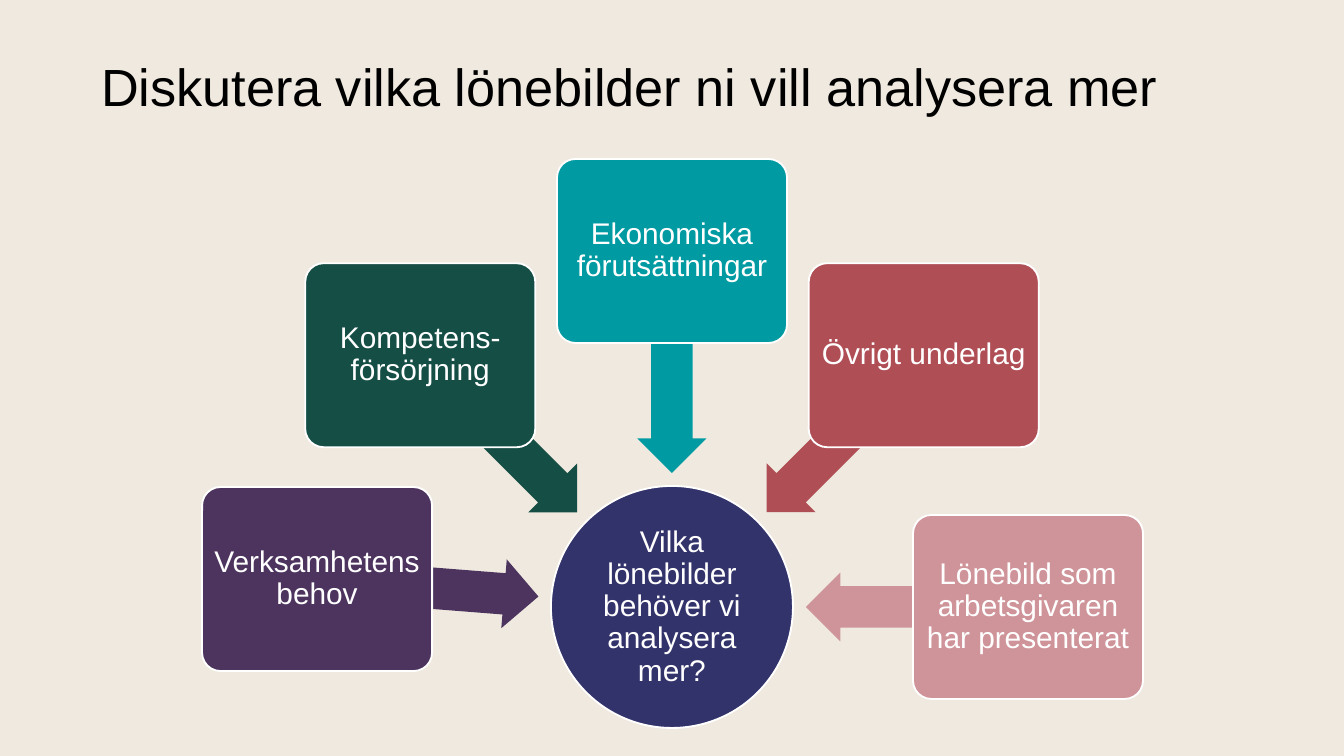
"""Build a slide of five inputs pointing at one central question."""
from math import cos, radians, sin

from pptx import Presentation
from pptx.dml.color import RGBColor
from pptx.enum.shapes import MSO_SHAPE
from pptx.enum.text import MSO_ANCHOR, MSO_AUTO_SIZE, PP_ALIGN
from pptx.util import Pt

ARROW, BOX, OVAL = MSO_SHAPE.LEFT_ARROW, MSO_SHAPE.ROUNDED_RECTANGLE, MSO_SHAPE.OVAL
LEFT, CENTER = PP_ALIGN.LEFT, PP_ALIGN.CENTER
MIDDLE, FIXED = MSO_ANCHOR.MIDDLE, MSO_AUTO_SIZE.NONE

COLORS = {
    "back": "EFE9DF", "black": "000000", "white": "FFFFFF", "navy": "33336B",
    "plum": "4D345F", "green": "154E45", "teal": "009BA2", "red": "AF4E55",
    "pink": "CF9499",
}
TITLE = "Diskutera vilka lönebilder ni vill analysera mer"
QUESTION = "Vilka lönebilder behöver vi analysera mer?"
INPUTS = [
    ("Verksamhetens behov", "plum", 184.5),
    ("Kompetens-försörjning", "green", 225),
    ("Ekonomiska förutsättningar", "teal", 270),
    ("Övrigt underlag", "red", 315),
    ("Lönebild som arbetsgivaren har presenterat", "pink", 0),
]

HUB = (672, 607)
HUB_SIZE = (242, 242)
BOX_SIZE = (230, 184)
ARROW_SIZE = (222, 69)
ARROW_DIST = 245
BOX_DIST = ARROW_DIST + ARROW_SIZE[0] / 2


def px(n):
    return round(n * 914400 / 134.4)


def color(name):
    return RGBColor.from_string(COLORS[name])


def write(shape, text, size=16, tint="white", align=CENTER, inset=0):
    frame = shape.text_frame
    frame.word_wrap = True
    frame.auto_size = FIXED
    frame.vertical_anchor = MIDDLE
    frame.margin_left = frame.margin_right = px(inset)
    frame.margin_top = frame.margin_bottom = px(inset)
    para = frame.paragraphs[0]
    para.alignment = align
    para.line_spacing = 0.9
    para.space_before = Pt(0)
    run = para.add_run()
    run.text = text
    run.font.name = "Arial"
    run.font.size = Pt(size)
    run.font.color.rgb = color(tint)


def draw(slide, kind, mid, size, tint, edge=True):
    (x, y), (w, h) = mid, size
    shape = slide.shapes.add_shape(kind, px(x - w / 2), px(y - h / 2), px(w), px(h))
    shape.shadow.inherit = False
    shape.fill.solid()
    shape.fill.fore_color.rgb = color(tint)
    if edge:
        shape.line.color.rgb = color("white")
        shape.line.width = Pt(1)
    else:
        shape.line.fill.background()
    return shape


def orbit(angle, dist):
    turn = radians(angle)
    return HUB[0] + dist * cos(turn), HUB[1] + dist * sin(turn)


def main():
    deck = Presentation()
    deck.slide_width, deck.slide_height = px(1344), px(756)
    slide = deck.slides.add_slide(deck.slide_layouts[5])
    slide.background.fill.solid()
    slide.background.fill.fore_color.rgb = color("back")

    title = slide.shapes.title
    title.left, title.top, title.width, title.height = map(px, (101, 17, 1102, 146))
    write(title, TITLE, size=28, tint="black", align=LEFT)

    hub = draw(slide, OVAL, HUB, HUB_SIZE, "navy")
    write(hub, QUESTION, inset=2)

    for text, tint, angle in INPUTS:
        arrow = draw(slide, ARROW, orbit(angle, ARROW_DIST), ARROW_SIZE, tint, edge=False)
        arrow.rotation = angle
        arrow.adjustments[0] = 0.6
        arrow.adjustments[1] = 0.5
        box = draw(slide, BOX, orbit(angle, BOX_DIST), BOX_SIZE, tint)
        box.adjustments[0] = 0.1
        write(box, text, inset=5)

    deck.save("out.pptx")


if __name__ == "__main__":
    main()
